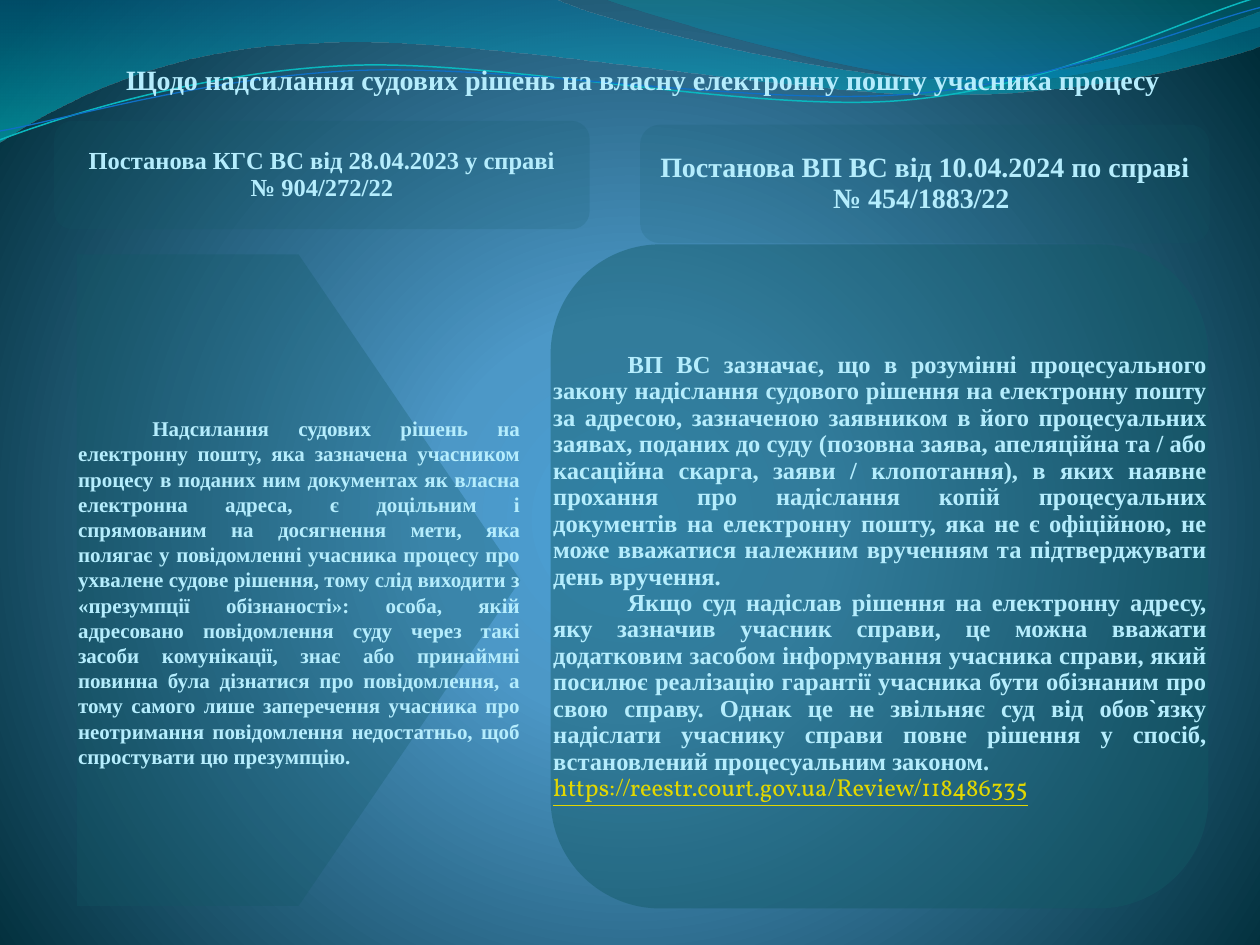
from dataclasses import dataclass, field

from lxml import etree
from pptx import Presentation
from pptx.dml.color import RGBColor
from pptx.enum.shapes import MSO_SHAPE
from pptx.enum.text import MSO_ANCHOR, PP_ALIGN
from pptx.oxml.ns import qn
from pptx.util import Inches, Pt

PENTAGON, ROUNDED, ALTERNATE = (
    MSO_SHAPE.PENTAGON, MSO_SHAPE.ROUNDED_RECTANGLE, MSO_SHAPE.FLOWCHART_ALTERNATE_PROCESS)
MIDDLE, TOP = MSO_ANCHOR.MIDDLE, MSO_ANCHOR.TOP
CENTER, JUSTIFY = PP_ALIGN.CENTER, PP_ALIGN.JUSTIFY

NUMBER_SIGN = "№" + chr(160)
COLORS = {
    "text": "B5EDFD", "link": "E2D700", "panel": "115964",
    "glow": "4AA0D6", "sky": "4C98C7", "night": "002C38",
    "blue": "0074A1", "cyan": "00C6CF", "teal": "00A1A9", "azure": "008BBF",
    "bright_line": "0AB8BF", "deep_line": "0F6FC6",
}
BODY_FONT = {"name": "Times New Roman", "bold": True, "underline": False}
LINK_FONT = {"name": "Vollkorn", "bold": False, "underline": True}


@dataclass
class Wave:
    start: tuple
    pieces: list
    stops: list = field(default_factory=list)
    line: str = ""
    width: float = 0


@dataclass
class Passage:
    box: tuple
    paragraphs: list
    size: float
    insets: tuple
    align: int = CENTER
    anchor: int = MIDDLE
    spacing: float = 0.9
    indent: float = 0
    link: str = ""
    outline: int | None = None
    opacity: int = 100


WAVES = [
    Wave((0, 0), [
        [(4.4, -0.01)],
        [(4.76, 0.17), (6.64, 0.63), (7.58, 0.63)],
        [(8.53, 0.63), (9.58, 0.26), (10, 0.09)],
        [(10.01, 0.36)],
        [(9.83, 0.44), (8.7, 0.76), (7.46, 0.75)],
        [(6.22, 0.75), (3.82, 0.28), (2.57, 0.34)],
        [(1.29, 0.36), (0.46, 0.83), (-0.01, 1.13)],
    ], stops=[(0, "blue", 45), (100, "cyan", 55)]),
    Wave((4.79, -0.01), [
        [(5.09, 0.11), (6.82, 0.62), (7.69, 0.65)],
        [(8.56, 0.69), (9.61, 0.32), (10, 0.21)],
        [(10, 0)],
    ], stops=[(0, "teal", 30), (80, "azure", 45)]),
    Wave((0, 1.11), [
        [(0.48, 0.93), (1.58, 0.57), (2.77, 0.52)],
        [(3.95, 0.47), (5.93, 0.89), (7.13, 0.8)],
        [(8.33, 0.71), (9.38, 0.15), (9.98, -0.02)],
    ], line="bright_line", width=0.85),
    Wave((0, 1.04), [
        [(0.47, 0.96), (1.64, 0.61), (2.83, 0.56)],
        [(4.03, 0.51), (5.97, 0.84), (7.17, 0.75)],
        [(8.36, 0.67), (9.41, 0.21), (10, 0.06)],
    ], line="deep_line", width=0.75),
]

PASSAGES = [
    Passage((0.67, 0.21, 8.94, 1.57),
            ["Щодо надсилання судових рішень на власну електронну пошту учасника процесу "],
            16, (0, 0.31, 0.02, 0), anchor=TOP, spacing=1),
    Passage((0.61, 2.02, 3.52, 5.17), [
        "Надсилання судових рішень на електронну пошту, яка зазначена учасником процесу в поданих "
        "ним документах як власна електронна адреса, є доцільним і спрямованим на досягнення мети, "
        "яка полягає у повідомленні учасника процесу про ухвалене судове рішення, тому слід виходити "
        "з «презумпції обізнаності»: особа, якій адресовано повідомлення суду через такі засоби "
        "комунікації, знає або принаймні повинна була дізнатися про повідомлення, а тому самого лише "
        "заперечення учасника про неотримання повідомлення недостатньо, щоб спростувати цю презумпцію."],
            12, (0.01, 0.2, 0, 0.01), JUSTIFY, spacing=1, indent=0.59,
            outline=PENTAGON, opacity=29),
    Passage((4.37, 1.94, 5.22, 5.27), [
        "ВП ВС зазначає, що в розумінні процесуального закону надіслання судового рішення на "
        "електронну пошту за адресою, зазначеною заявником в його процесуальних заявах, поданих до "
        "суду (позовна заява, апеляційна та / або касаційна скарга, заяви / клопотання), в яких "
        "наявне прохання про надіслання копій процесуальних документів на електронну пошту, яка не є "
        "офіційною, не може вважатися належним врученням та підтверджувати день вручення.",
        "Якщо суд надіслав рішення на електронну адресу, яку зазначив учасник справи, це можна "
        "вважати додатковим засобом інформування учасника справи, який посилює реалізацію гарантії "
        "учасника бути обізнаним про свою справу. Однак це не звільняє суд від обов`язку надіслати "
        "учаснику справи повне рішення у спосіб, встановлений процесуальним законом."],
            14, (0.02, 0.03, 0.01, 0.02), JUSTIFY, indent=0.59,
            link="https://reestr.court.gov.ua/Review/118486335", outline=ALTERNATE, opacity=44),
    Passage((0.43, 0.96, 4.25, 0.86),
            [f"Постанова КГС ВС від 28.04.2023 у справі {NUMBER_SIGN}904/272/22"],
            14, (0.06,) * 4, outline=ROUNDED, opacity=17),
    Passage((5.08, 0.99, 4.52, 0.94),
            [f"Постанова ВП ВС від 10.04.2024 по справі {NUMBER_SIGN}454/1883/22 "],
            16, (0.07,) * 4, outline=ROUNDED, opacity=16),
]


def set_opacity(color_element, percent: int) -> None:
    etree.SubElement(color_element, qn("a:alpha"), val=str(percent * 1000))


def set_gradient(gradient, stops: list, circular: bool = False) -> None:
    for child in list(gradient):
        gradient.remove(child)
    stop_list = etree.SubElement(gradient, qn("a:gsLst"))
    for position, color, opacity in stops:
        stop = etree.SubElement(stop_list, qn("a:gs"), pos=str(position * 1000))
        set_opacity(etree.SubElement(stop, qn("a:srgbClr"), val=COLORS[color]), opacity)
    if circular:
        path = etree.SubElement(gradient, qn("a:path"), {"path": "circle"})
        etree.SubElement(path, qn("a:fillToRect"), l="10000", t="110000", r="10000", b="100000")
    else:
        etree.SubElement(gradient, qn("a:lin"), ang="5400000", scaled="0")


def bend_segments(ribbon, pieces: list) -> None:
    segments = iter(list(ribbon.element.iter(qn("a:lnTo"))))
    for piece in pieces:
        group = [next(segments) for _ in piece]
        if len(group) == 1:
            continue
        curve = etree.Element(qn("a:cubicBezTo"))
        group[0].addprevious(curve)
        for segment in group:
            curve.append(segment[0])
            segment.getparent().remove(segment)


def draw_wave(slide, wave: Wave) -> None:
    points = [(Inches(x), Inches(y)) for piece in wave.pieces for x, y in piece]
    builder = slide.shapes.build_freeform(*map(Inches, wave.start), scale=1.0)
    builder.add_line_segments(points, close=bool(wave.stops))
    ribbon = builder.convert_to_shape()
    bend_segments(ribbon, wave.pieces)
    ribbon.shadow.inherit = False
    if wave.stops:
        ribbon.fill.gradient()
        set_gradient(ribbon.element.spPr.find(qn("a:gradFill")), wave.stops)
        ribbon.line.fill.background()
    else:
        ribbon.fill.background()
        ribbon.line.color.rgb = RGBColor.from_string(COLORS[wave.line])
        ribbon.line.width = Pt(wave.width)


def draw_panel(slide, passage: Passage) -> None:
    panel = slide.shapes.add_shape(passage.outline, *map(Inches, passage.box))
    panel.shadow.inherit = False
    panel.fill.solid()
    panel.fill.fore_color.rgb = RGBColor.from_string(COLORS["panel"])
    set_opacity(panel.element.spPr.find(qn("a:solidFill"))[0], passage.opacity)
    panel.line.fill.background()


def write_paragraph(paragraph, text: str, passage: Passage, font: dict, color: str,
                    indent: float) -> None:
    paragraph.alignment = passage.align
    paragraph.line_spacing = passage.spacing
    if indent:
        paragraph._p.get_or_add_pPr().set("indent", str(Inches(indent)))
    run = paragraph.add_run()
    run.text = text
    for name, value in {**font, "size": Pt(passage.size)}.items():
        setattr(run.font, name, value)
    run.font.color.rgb = RGBColor.from_string(COLORS[color])


def draw_passage(slide, passage: Passage) -> None:
    if passage.outline is not None:
        draw_panel(slide, passage)
    frame = slide.shapes.add_textbox(*map(Inches, passage.box)).text_frame
    sides = ("margin_left", "margin_top", "margin_right", "margin_bottom")
    layout = {"word_wrap": True, "vertical_anchor": passage.anchor,
              **dict(zip(sides, map(Inches, passage.insets)))}
    for name, value in layout.items():
        setattr(frame, name, value)
    lines = [(text, BODY_FONT, "text", passage.indent) for text in passage.paragraphs]
    if passage.link:
        lines.append((passage.link, LINK_FONT, "link", 0))
    for number, (text, font, color, indent) in enumerate(lines):
        paragraph = frame.add_paragraph() if number else frame.paragraphs[0]
        write_paragraph(paragraph, text, passage, font, color, indent)


def main() -> None:
    deck = Presentation()
    deck.slide_width, deck.slide_height = Inches(10), Inches(7.5)
    slide = deck.slides.add_slide(deck.slide_layouts[6])
    slide.background.fill.gradient()
    set_gradient(next(slide.element.iter(qn("a:gradFill"))),
                 [(0, "glow", 100), (25, "sky", 100), (100, "night", 100)], circular=True)
    for wave in WAVES:
        draw_wave(slide, wave)
    for passage in PASSAGES:
        draw_passage(slide, passage)
    deck.save("out.pptx")


if __name__ == "__main__":
    main()
